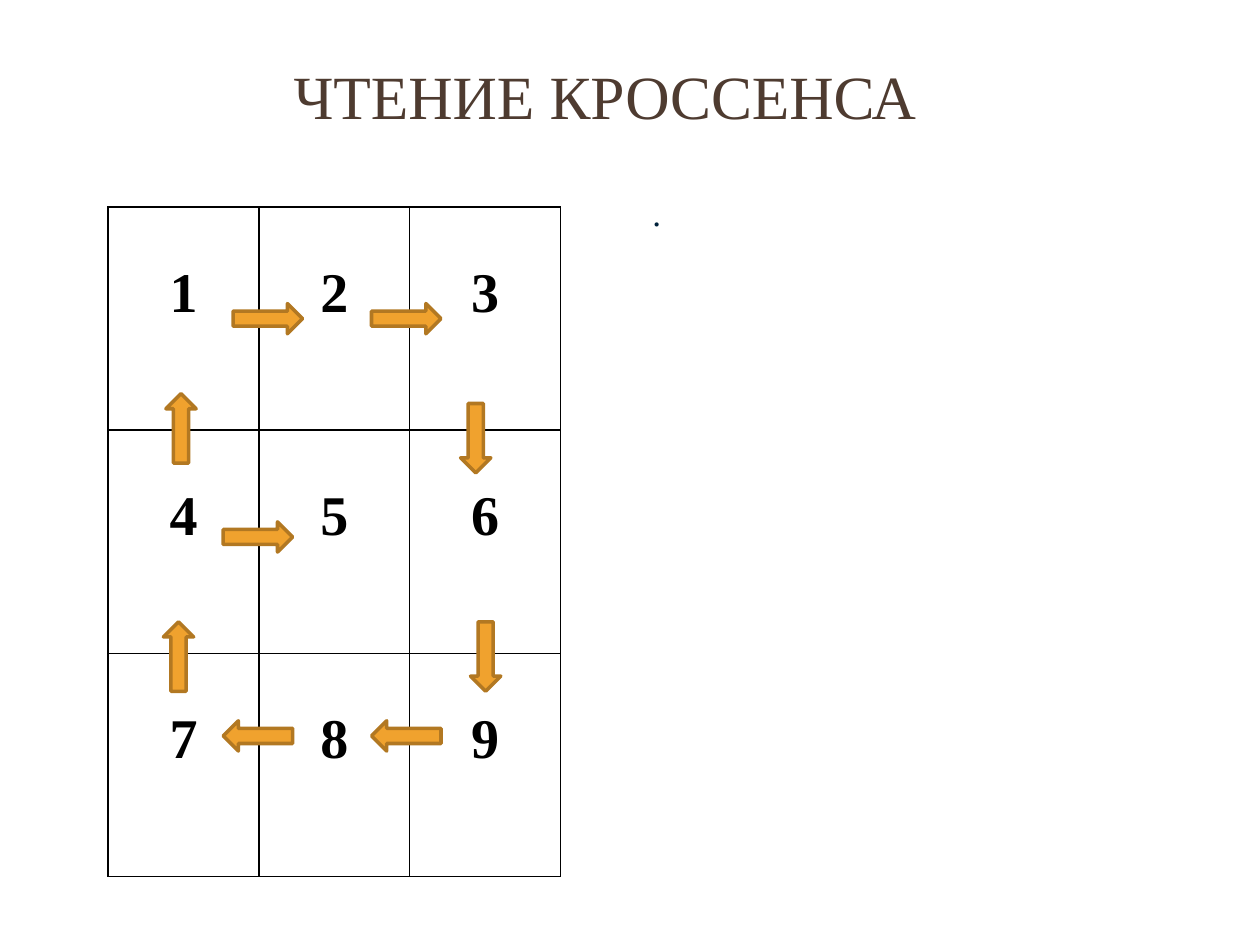
from lxml import etree
from pptx import Presentation
from pptx import util as u
from pptx.dml.color import RGBColor
from pptx.enum import shapes, text
from pptx.oxml import ns

BLACK = RGBColor(0x00, 0x00, 0x00)
NAVY = RGBColor(0x00, 0x21, 0x3A)
BROWN = RGBColor(0x4E, 0x3B, 0x30)
ORANGE = RGBColor(0xF0, 0xA2, 0x2E)
OCHRE = RGBColor(0xB2, 0x78, 0x22)

RIGHT, DOWN, LEFT, UP = 0, 90, 180, 270
STEPS = [
    (4.7, 6.12, RIGHT),
    (7.49, 6.12, RIGHT),
    (8.89, 8.53, DOWN),
    (4.5, 14.53, LEFT),
    (7.49, 14.53, LEFT),
    (9.09, 12.93, DOWN),
    (2.9, 12.93, UP),
    (2.95, 8.33, UP),
    (4.5, 10.52, RIGHT),
]


class CrossensSlide:
    font = "Times New Roman"

    def __init__(self, deck):
        self.slide = deck.slides.add_slide(deck.slide_layouts[6])

    def add_words(self, paragraph, words, size, color, bold=False, align=text.PP_ALIGN.LEFT):
        paragraph.alignment = align
        run = paragraph.add_run()
        run.text = words
        run.font.name = self.font
        run.font.size = u.Pt(size)
        run.font.bold = bold
        run.font.color.rgb = color

    def label(self, box, words, size, color, align, anchor):
        frame = self.slide.shapes.add_textbox(*map(u.Cm, box)).text_frame
        frame.word_wrap = True
        frame.vertical_anchor = anchor
        self.add_words(frame.paragraphs[0], words, size, color, align=align)

    def border(self, cell):
        properties = cell._tc.get_or_add_tcPr()
        for index, side in enumerate(("a:lnL", "a:lnR", "a:lnT", "a:lnB")):
            edge = etree.Element(ns.qn(side), w=str(u.Pt(1)))
            fill = etree.SubElement(edge, ns.qn("a:solidFill"))
            etree.SubElement(fill, ns.qn("a:srgbClr"), val=str(BLACK))
            properties.insert(index, edge)

    def grid(self, left, top, count, cell_width, cell_height):
        table = self.slide.shapes.add_table(
            count, count, u.Cm(left), u.Cm(top),
            u.Cm(count * cell_width), u.Cm(count * cell_height)).table
        table.first_row = table.horz_banding = False
        for row in table.rows:
            row.height = u.Cm(cell_height)
        for column in table.columns:
            column.width = u.Cm(cell_width)
        for number, cell in enumerate(table.iter_cells(), 1):
            cell.fill.background()
            cell.margin_left = cell.margin_right = u.Cm(0.18)
            cell.margin_top, cell.margin_bottom = u.Cm(1.12), 0
            self.add_words(cell.text_frame.paragraphs[0], str(number), 32, BLACK,
                           bold=True, align=text.PP_ALIGN.CENTER)
            self.border(cell)

    def arrow(self, left, top, rotation):
        arrow = self.slide.shapes.add_shape(
            shapes.MSO_SHAPE.RIGHT_ARROW, u.Cm(left), u.Cm(top), u.Cm(1.4), u.Cm(0.61))
        arrow.rotation = rotation
        arrow.shadow.inherit = False
        arrow.fill.solid()
        arrow.fill.fore_color.rgb = ORANGE
        arrow.line.color.rgb = OCHRE
        arrow.line.width = u.Pt(2)


def main():
    deck = Presentation()
    deck.slide_width, deck.slide_height = u.Cm(25.4), u.Cm(19.05)
    crossens = CrossensSlide(deck)
    crossens.grid(2.18, 4.17, 3, 3.04, 4.5)
    for step in STEPS:
        crossens.arrow(*step)
    crossens.label((12.9, 3.73, 11.2, 1.12), ".", 20, NAVY,
                   text.PP_ALIGN.LEFT, text.MSO_ANCHOR.TOP)
    crossens.label((0.89, 0.74, 22.61, 2.34), "ЧТЕНИЕ КРОССЕНСА", 35.1, BROWN,
                   text.PP_ALIGN.CENTER, text.MSO_ANCHOR.MIDDLE)
    deck.save("out.pptx")


if __name__ == "__main__":
    main()
